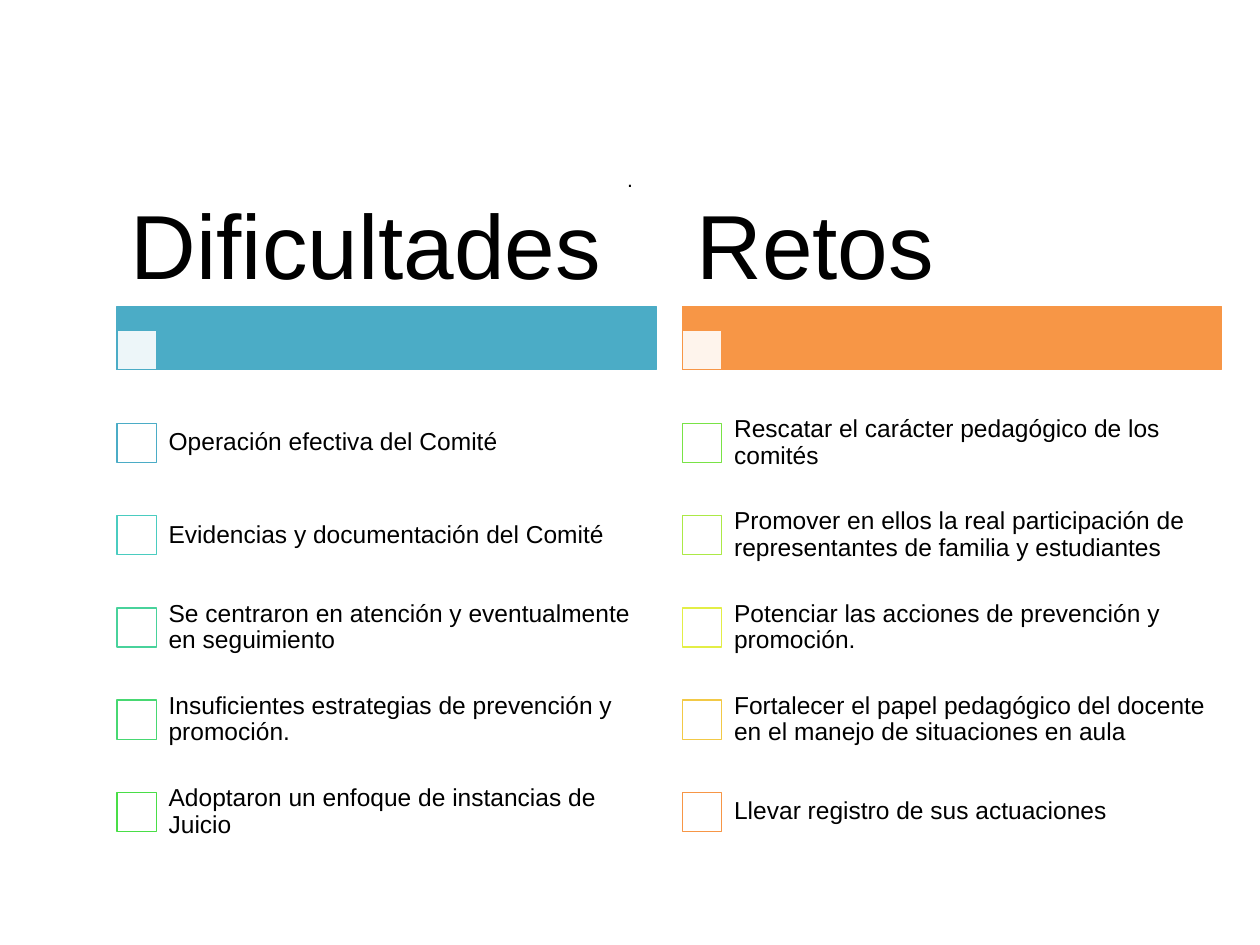
"""Build a two-column checklist slide of difficulties and challenges."""
from dataclasses import dataclass

from lxml import etree
from pptx import Presentation
from pptx.dml.color import RGBColor
from pptx.enum.shapes import MSO_SHAPE
from pptx.enum.text import MSO_ANCHOR, MSO_AUTO_SIZE, PP_ALIGN
from pptx.oxml.ns import qn
from pptx.util import Cm, Pt

RECTANGLE = MSO_SHAPE.RECTANGLE
MIDDLE = MSO_ANCHOR.MIDDLE
BOTTOM = MSO_ANCHOR.BOTTOM
LEFT = PP_ALIGN.LEFT
CENTER = PP_ALIGN.CENTER
NO_AUTOFIT = MSO_AUTO_SIZE.NONE

COMPARISON_LAYOUT = 4
COLUMN_WIDTH = 10.87
HEADING_TOP, HEADING_HEIGHT = 3.89, 2.29
BAR_TOP, BAR_HEIGHT = 6.18, 1.27
BOX_SIZE = 0.79
ROWS_TOP, ROW_HEIGHT = 8.0, 1.86
LABEL_INDENT = 0.76


@dataclass
class Item:
    text: str
    color: str


@dataclass
class Column:
    heading: str
    placeholder: int
    left: float
    color: str
    items: list[Item]


COLUMNS = [
    Column("Dificultades", 1, 2.36, "4BACC6", [
        Item("Operación efectiva del Comité", "4BACC6"),
        Item("Evidencias y documentación del Comité", "4ACCC0"),
        Item("Se centraron en atención y eventualmente en seguimiento", "48D29B"),
        Item("Insuficientes estrategias de prevención y promoción.", "47D872"),
        Item("Adoptaron un enfoque de instancias de Juicio", "49DE47"),
    ]),
    Column("Retos", 3, 13.76, "F79646", [
        Item("Rescatar el carácter pedagógico de los comités", "79E346"),
        Item("Promover en ellos la real participación de representantes "
             "de familia y estudiantes", "ACE946"),
        Item("Potenciar las acciones de prevención y promoción.", "E3EE46"),
        Item("Fortalecer el papel pedagógico del docente en el manejo "
             "de situaciones en aula", "F2C946"),
        Item("Llevar registro de sus actuaciones", "F79646"),
    ]),
]


def set_color(color_format, value: str) -> None:
    color_format.rgb = RGBColor.from_string(value)


def add_rectangle(slide, left: float, top: float, width: float, height: float,
                  fill: str, line: str):
    shape = slide.shapes.add_shape(RECTANGLE, Cm(left), Cm(top), Cm(width), Cm(height))
    shape.shadow.inherit = False
    shape.fill.solid()
    set_color(shape.fill.fore_color, fill)
    set_color(shape.line.color, line)
    shape.line.width = Pt(0.75)
    return shape


def set_opacity(shape, percent: int) -> None:
    color = shape.fill._xPr.find(qn("a:solidFill"))[0]
    etree.SubElement(color, qn("a:alpha")).set("val", str(percent * 1000))


def write_text(shape, text: str, size: int, vertical_inset: float,
               anchor=MIDDLE, alignment=LEFT) -> None:
    frame = shape.text_frame
    frame.text = text
    frame.word_wrap = True
    frame.auto_size = NO_AUTOFIT
    frame.vertical_anchor = anchor
    frame.margin_left = frame.margin_right = Cm(0.28)
    frame.margin_top = frame.margin_bottom = Cm(vertical_inset)
    paragraph = frame.paragraphs[0]
    paragraph.alignment = alignment
    paragraph.line_spacing = 0.9
    paragraph.space_before = Pt(0)
    paragraph.font.name = "Arial"
    paragraph.font.size = Pt(size)
    paragraph.font.bold = False
    set_color(paragraph.font.color, "000000")


def add_label(slide, left: float, top: float, width: float, height: float):
    return slide.shapes.add_textbox(Cm(left), Cm(top), Cm(width), Cm(height))


def draw_heading(slide, column: Column) -> None:
    add_rectangle(slide, column.left, BAR_TOP, COLUMN_WIDTH, BAR_HEIGHT,
                  column.color, column.color)
    box = add_rectangle(slide, column.left, BAR_TOP + BAR_HEIGHT - BOX_SIZE,
                        BOX_SIZE, BOX_SIZE, "FFFFFF", column.color)
    set_opacity(box, 90)
    heading = next(shape for shape in slide.placeholders
                   if shape.placeholder_format.idx == column.placeholder)
    heading.left, heading.top = Cm(column.left), Cm(HEADING_TOP)
    heading.width, heading.height = Cm(COLUMN_WIDTH), Cm(HEADING_HEIGHT)
    write_text(heading, column.heading, 52, 0.18)


def draw_items(slide, column: Column) -> None:
    for row, item in enumerate(column.items):
        top = ROWS_TOP + row * ROW_HEIGHT
        add_rectangle(slide, column.left, top + (ROW_HEIGHT - BOX_SIZE) / 2,
                      BOX_SIZE, BOX_SIZE, "FFFFFF", item.color)
        label = add_label(slide, column.left + LABEL_INDENT, top,
                          COLUMN_WIDTH - LABEL_INDENT, ROW_HEIGHT)
        write_text(label, item.text, 14, 0.28)


def main() -> None:
    presentation = Presentation()
    presentation.slide_width, presentation.slide_height = Cm(25.4), Cm(19.05)
    slide = presentation.slides.add_slide(presentation.slide_layouts[COMPARISON_LAYOUT])
    write_text(add_label(slide, 6.35, 2.46, 12.7, 1.55), ".", 12, 0.13, BOTTOM, CENTER)
    for column in COLUMNS:
        draw_heading(slide, column)
        draw_items(slide, column)
    for placeholder in list(slide.placeholders):
        if not placeholder.text_frame.text:
            placeholder.element.getparent().remove(placeholder.element)
    presentation.save("out.pptx")


if __name__ == "__main__":
    main()
